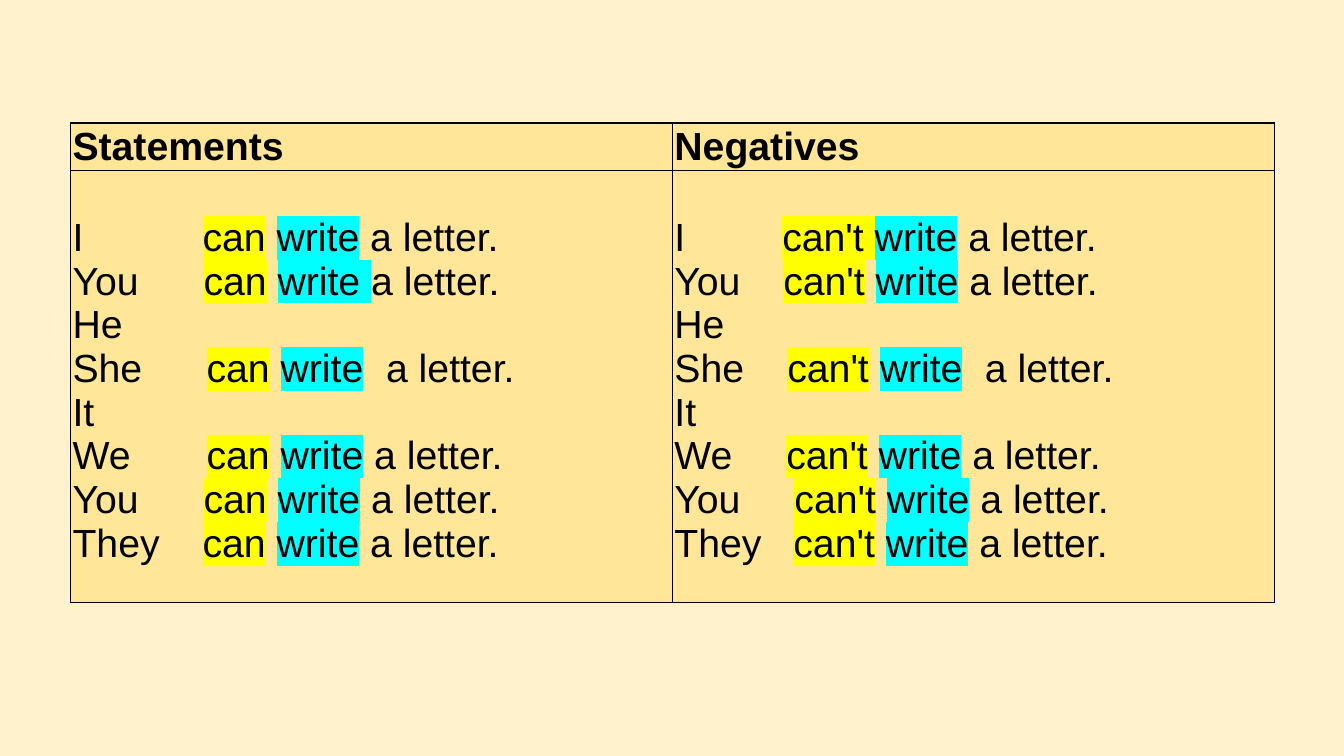
from lxml.etree import SubElement
from pptx import Presentation
from pptx.dml.color import RGBColor
from pptx.enum.text import MSO_ANCHOR
from pptx.oxml import parse_xml
from pptx.oxml.ns import nsdecls, qn
from pptx.util import Inches, Pt

CREAM = RGBColor(0xFF, 0xF2, 0xCC)
SAND = RGBColor(0xFF, 0xE6, 0x99)
BLACK = RGBColor(0x00, 0x00, 0x00)
YELLOW = RGBColor(0xFF, 0xFF, 0x00)
CYAN = RGBColor(0x00, 0xFF, 0xFF)

PART_HIGHLIGHTS = (None, YELLOW, None, CYAN, None)

STATEMENTS = (
    ("I\t|can| |write| a letter.", (1.29,)),
    ("You\t|can| |write |a letter.", (1.3,)),
    ("He", ()),
    ("She\t|can| |write|\ta letter.", (1.33, 3.11)),
    ("It", ()),
    ("We\t|can| |write| a letter.", (1.33,)),
    ("You\t|can| |write| a letter.", (1.3,)),
    ("They\t|can| |write| a letter.", (1.29,)),
)
NEGATIVES = (
    ("I\t|can't ||write| a letter.", (1.07,)),
    ("You\t|can't| |write| a letter.", (1.08,)),
    ("He", ()),
    ("She\t|can't| |write|\ta letter.", (1.12, 3.08)),
    ("It", ()),
    ("We\t|can't| |write| a letter.", (1.11,)),
    ("You\t|can't| |write| a letter.", (1.19,)),
    ("They\t|can't| |write| a letter.", (1.18,)),
)


class GrammarSlide:
    """Holds the table style and the slide being built."""

    font_format = {"name": "Arial", "size": Pt(28)}
    cell_format = {
        "margin_left": Inches(0.02),
        "margin_right": Inches(0.02),
        "margin_top": Inches(0.02),
        "margin_bottom": Inches(0.02),
        "vertical_anchor": MSO_ANCHOR.TOP,
    }
    table_format = {"first_row": False, "horz_banding": False}

    def __init__(self, presentation):
        self.slide = presentation.slides.add_slide(presentation.slide_layouts[6])
        self.slide.background.fill.solid()
        self.slide.background.fill.fore_color.rgb = CREAM

    def apply(self, target, values):
        for name, value in values.items():
            setattr(target, name, value)

    def table(self, left, top, widths, heights):
        grid = self.slide.shapes.add_table(
            len(heights), len(widths), Inches(left), Inches(top),
            Inches(sum(widths)), Inches(sum(heights))).table
        self.apply(grid, self.table_format)
        for column, width in zip(grid.columns, widths):
            column.width = Inches(width)
        for row, height in zip(grid.rows, heights):
            row.height = Inches(height)
        return grid

    def cell(self, cell, lines, bold=False, margin_top=0.02):
        self.apply(cell, {**self.cell_format, "margin_top": Inches(margin_top)})
        cell.fill.solid()
        cell.fill.fore_color.rgb = SAND
        self.borders(cell)
        for index, (text, tabs) in enumerate(lines):
            frame = cell.text_frame
            line = frame.add_paragraph() if index else frame.paragraphs[0]
            self.tab_stops(line, tabs)
            for part, highlight in zip(text.split("|"), PART_HIGHLIGHTS):
                if part:
                    self.run(line, part, bold, highlight)

    def borders(self, cell):
        properties = cell._tc.get_or_add_tcPr()
        for index, side in enumerate(("lnL", "lnR", "lnT", "lnB")):
            properties.insert(index, parse_xml(
                f'<a:{side} {nsdecls("a")} w="{Pt(1)}"><a:solidFill>'
                f'<a:srgbClr val="{BLACK}"/></a:solidFill></a:{side}>'))

    def tab_stops(self, line, tabs):
        if tabs:
            stops = SubElement(line._p.get_or_add_pPr(), qn("a:tabLst"))
            for position in tabs:
                SubElement(stops, qn("a:tab"), pos=str(Inches(position)), algn="l")

    def run(self, line, text, bold, highlight):
        run = line.add_run()
        run.text = text
        self.apply(run.font, {**self.font_format, "bold": bold})
        run.font.color.rgb = BLACK
        if highlight is not None:
            run._r.rPr.find(qn("a:latin")).addprevious(parse_xml(
                f'<a:highlight {nsdecls("a")}>'
                f'<a:srgbClr val="{highlight}"/></a:highlight>'))


def main():
    presentation = Presentation()
    presentation.slide_width = Inches(13.33)
    presentation.slide_height = Inches(7.5)
    lesson = GrammarSlide(presentation)
    forms = lesson.table(0.7, 1.22, (5.97, 5.97), (0.47, 4.28))
    columns = (("Statements", STATEMENTS), ("Negatives", NEGATIVES))
    for column, (heading, sentences) in enumerate(columns):
        lesson.cell(forms.cell(0, column), [(heading, ())], bold=True)
        lesson.cell(forms.cell(1, column), sentences, margin_top=0.45)
    presentation.save("out.pptx")


if __name__ == "__main__":
    main()
